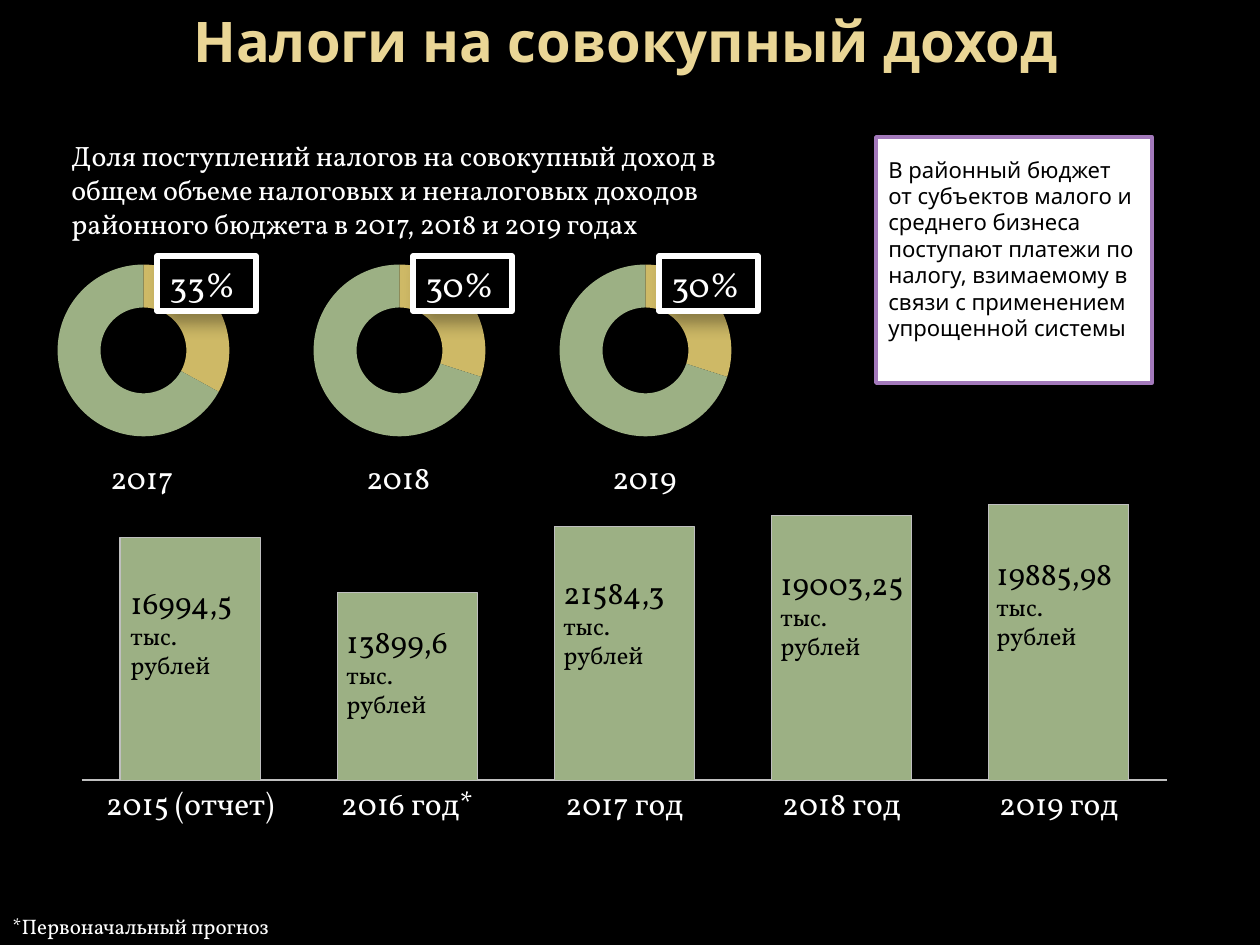
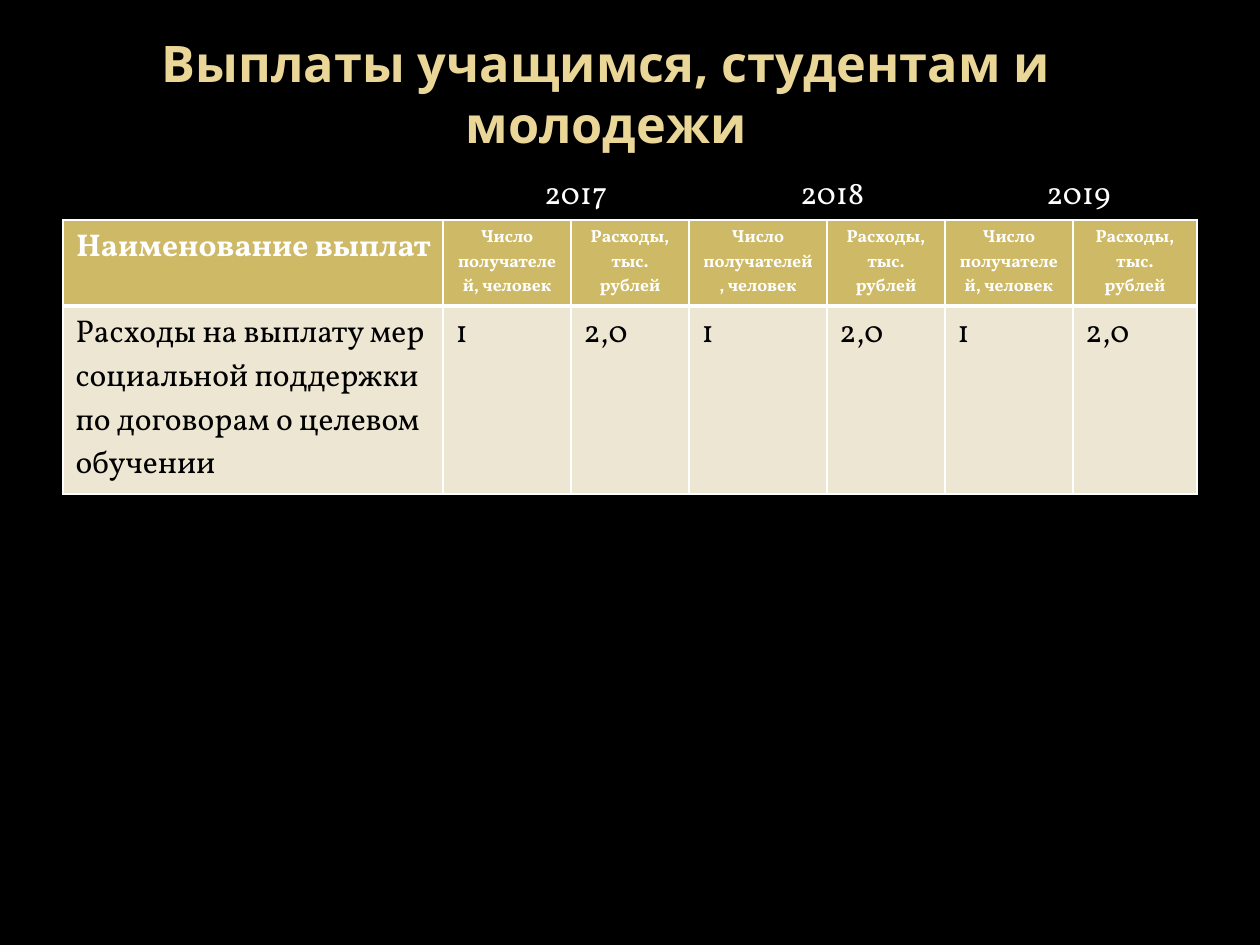
from lxml import etree
from pptx import Presentation
from pptx.chart.data import CategoryChartData
from pptx.dml.color import RGBColor
from pptx.enum.chart import XL_CHART_TYPE as ChartType, XL_TICK_MARK as Tick
from pptx.enum.shapes import MSO_SHAPE as Preset
from pptx.enum.text import MSO_ANCHOR as Anchor, MSO_AUTO_SIZE as AutoSize, PP_ALIGN as Align
from pptx.oxml import parse_xml
from pptx.oxml.ns import nsdecls, qn
from pptx.util import Emu, Pt

# ---- Shared style ----
COLORS = {
    "black": "000000", "white": "FFFFFF", "title": "EAD696", "gold": "CEB966",
    "green": "9CB084", "violet": "A379BB", "cream": "EDE6D3", "grey": "BFBFBF",
}
SERIF, SANS = "Vollkorn", "Noto Sans"
EMU_PER_PX = 914400 / 126
PX_PER_PT = 126 / 72
LEADING = 1.2  # line pitch of wrapped text, in font sizes
TOP_TRIM = 0.19  # height that the tight leading takes off the first line
YEARS = ("2017", "2018", "2019")
YEAR_OFFSETS = (0, 256, 502)

# ---- Slide 1 content ----
INCOME_TITLE = "Налоги на совокупный доход"
SHARE_INTRO = ("Доля поступлений налогов на совокупный доход в общем объеме налоговых и "
               "неналоговых доходов районного бюджета в 2017, 2018 и 2019 годах")
SHARES = (33, 30, 30)
PAYERS_NOTE = ("В районный бюджет от субъектов малого и среднего бизнеса поступают платежи "
               "по налогу, взимаемому в связи с применением упрощенной системы")
# category, bar height in percent, amount, top of the amount in px
INCOME_BARS = [
    ("2015 (отчет)", 88, "16994,5", 571),
    ("2016 год*", 68, "13899,6", 610),
    ("2017 год", 92, "21584,3", 561),
    ("2018 год", 96, "19003,25", 552),
    ("2019 год", 100, "19885,98", 542),
]
AMOUNT_UNIT = "тыс. рублей"
FOOTNOTE = "*Первоначальный прогноз"

# ---- Slide 2 content ----
PAYMENTS_TITLE = "Выплаты учащимся, студентам и молодежи"
PAYMENT_HEADER = ["Наименование выплат"] + [
    "Число получателей, человек", "Расходы,\nтыс. рублей"] * len(YEARS)
PAYMENT_ROW = ["Расходы на выплату мер социальной поддержки по договорам о целевом обучении"
               ] + ["1", "2,0"] * len(YEARS)
PAYMENT_COLUMNS = (380, 128, 118, 138, 118, 128, 124)
PAYMENT_ROW_HEIGHTS = (86, 188)


# ---- Helpers ----
def px(length):
    return Emu(round(length * EMU_PER_PX))


def place(*lengths):
    return [px(length) for length in lengths]


def rgb(name):
    return RGBColor.from_string(COLORS[name])


def style(para, size, color, font=SERIF, bold=False, align=Align.LEFT, tight=False):
    para.alignment = align
    if tight:
        para.line_spacing = Pt(size * LEADING)
    for span in para.runs:
        span.font.size, span.font.name, span.font.bold = Pt(size), font, bold
        span.font.color.rgb = rgb(color)


def add_text(slide, text, left, top, width, height, sizes, color="white", tight=False):
    """Add a text box; sizes holds one font size per paragraph."""
    box = slide.shapes.add_textbox(*place(left, top, width, height))
    frame = box.text_frame
    frame.word_wrap, frame.text = True, text
    if tight:
        frame.margin_top = px(6 + round(TOP_TRIM * sizes[0] * PX_PER_PT))
    for para, size in zip(frame.paragraphs, sizes):
        style(para, size, color, tight=tight)


def add_box(slide, text, at, fill, line, line_width, size, color, font=SERIF, tight=False):
    box = slide.shapes.add_shape(Preset.RECTANGLE, *place(*at))
    box.shadow.inherit = False
    box.fill.solid()
    box.fill.fore_color.rgb = rgb(fill)
    box.line.color.rgb, box.line.width = rgb(line), Pt(line_width)
    frame = box.text_frame
    frame.word_wrap, frame.vertical_anchor, frame.text = True, Anchor.TOP, text
    style(frame.paragraphs[0], size, color, font, tight=tight)
    return box


def add_drop_shadow(box):
    effects = box.fill._xPr.find(qn("a:effectLst"))
    effects.append(parse_xml(
        f'<a:outerShdw {nsdecls("a")} blurRad="{Pt(10.2)}" dist="{Pt(8)}" dir="2700000" '
        f'rotWithShape="0"><a:srgbClr val="{COLORS["black"]}"><a:alpha val="35000"/>'
        '</a:srgbClr></a:outerShdw>'))


def add_titled_slide(deck, title, at, size, wrapped=False):
    slide = deck.slides.add_slide(deck.slide_layouts[5])
    box = slide.shapes.title
    box.left, box.top, box.width, box.height = place(*at)
    frame = box.text_frame
    frame.text, frame.word_wrap = title, True
    frame.auto_size, frame.vertical_anchor = AutoSize.NONE, Anchor.MIDDLE
    style(frame.paragraphs[0], size, "title", SANS, True, Align.CENTER, wrapped)
    return slide


def add_years(slide, left, top):
    for year, offset in zip(YEARS, YEAR_OFFSETS):
        add_text(slide, year, left + offset, top, 90, 50, [18])


def add_plain_chart(slide, kind, at, categories, values, layout):
    data = CategoryChartData()
    data.categories = categories
    data.add_series("Series 1", values)
    chart = slide.shapes.add_chart(kind, *place(*at), data).chart
    chart.has_title = chart.has_legend = False
    chart.font.name, chart.font.size = SERIF, Pt(18)
    chart.font.color.rgb = rgb("white")
    # Fixed inner plot area, as fractions of the frame
    plot_area = chart.element.find(".//" + qn("c:plotArea"))
    for automatic in plot_area.findall(qn("c:layout")):
        plot_area.remove(automatic)
    parts = "".join(f'<c:{tag} val="{value}"/>' for tag, value in zip("xywh", layout))
    plot_area.insert(0, parse_xml(
        f'<c:layout {nsdecls("c")}><c:manualLayout><c:layoutTarget val="inner"/>'
        f'<c:xMode val="edge"/><c:yMode val="edge"/>{parts}</c:manualLayout></c:layout>'))
    return chart


def set_borders(cell, bottom_width):
    properties = cell._tc.get_or_add_tcPr()
    widths = {"lnL": 1, "lnR": 1, "lnT": 1, "lnB": bottom_width}
    for position, (tag, width) in enumerate(widths.items()):
        line = etree.Element(qn("a:" + tag), w=str(Pt(width)))
        fill = etree.SubElement(line, qn("a:solidFill"))
        etree.SubElement(fill, qn("a:srgbClr"), val=COLORS["white"])
        properties.insert(position, line)


# ---- Slide parts ----
def add_income_bars(slide):
    names, heights, amounts, tops = zip(*INCOME_BARS)
    chart = add_plain_chart(slide, ChartType.COLUMN_STACKED, (59, 483, 1131, 354),
                            names, heights, (0.02, 0.06, 0.96, 0.78))
    plot = chart.plots[0]
    plot.gap_width, plot.overlap, plot.vary_by_categories = 55, 100, False
    bars = plot.series[0].format
    bars.fill.solid()
    bars.fill.fore_color.rgb = rgb("green")
    bars.line.color.rgb, bars.line.width = rgb("grey"), Pt(0.75)
    values = chart.value_axis
    values.visible = values.has_major_gridlines = False
    values.minimum_scale, values.maximum_scale = 0, 100
    axis = chart.category_axis
    axis.major_tick_mark = axis.minor_tick_mark = Tick.NONE
    axis.format.line.color.rgb, axis.format.line.width = rgb("grey"), Pt(1)
    for index, (amount, top) in enumerate(zip(amounts, tops)):
        add_text(slide, f"{amount}\n{AMOUNT_UNIT}", 118 + round(index * 216.5), top,
                 150, 110, [18, 14], "black", tight=True)


def add_share_rings(slide):
    for share, offset in zip(SHARES, YEAR_OFFSETS):
        chart = add_plain_chart(slide, ChartType.DOUGHNUT, (39 + offset, 246, 207, 207),
                                ("1", "2"), (share, 100 - share), (0.09, 0.09, 0.83, 0.83))
        plot = chart.plots[0]
        plot.vary_by_categories = False
        for index, color in enumerate(("gold", "green")):
            fill = plot.series[0].points[index].format.fill
            fill.solid()
            fill.fore_color.rgb = rgb(color)
    for share, offset in zip(SHARES, YEAR_OFFSETS):
        label = add_box(slide, f"{share}%", (157 + offset, 256, 99, 55),
                        "black", "white", 3, 20, "white")
        add_drop_shadow(label)


def add_payments_table(slide):
    rows = (PAYMENT_HEADER, PAYMENT_ROW)
    table = slide.shapes.add_table(
        len(rows), len(PAYMENT_COLUMNS),
        *place(63, 220, sum(PAYMENT_COLUMNS), sum(PAYMENT_ROW_HEIGHTS))).table
    for column, width in zip(table.columns, PAYMENT_COLUMNS):
        column.width = px(width)
    for row_index, (texts, height) in enumerate(zip(rows, PAYMENT_ROW_HEIGHTS)):
        table.rows[row_index].height = px(height)
        header = row_index == 0
        for column_index, text in enumerate(texts):
            cell = table.cell(row_index, column_index)
            cell.text = text
            cell.fill.solid()
            cell.fill.fore_color.rgb = rgb("gold" if header else "cream")
            set_borders(cell, 3 if header else 1)
            if column_index == 0:
                cell.margin_right = px(11)
            size = 10 if header and column_index else 18
            for para in cell.text_frame.paragraphs:
                style(para, size, "white" if header else "black", bold=header,
                      align=Align.CENTER if header else Align.LEFT)


def main():
    deck = Presentation()
    deck.slide_width, deck.slide_height = place(1260, 945)
    background = deck.slide_master.background.fill
    background.solid()
    background.fore_color.rgb = rgb("black")

    # Slide 1: income taxes
    slide = add_titled_slide(deck, INCOME_TITLE, (59, 0, 1134, 81), 32)
    add_income_bars(slide)
    note = add_box(slide, PAYERS_NOTE, (876, 137, 276, 246), "white", "violet", 2,
                   12.6, "black", SANS, tight=True)
    note.text_frame.margin_top = px(19)
    add_share_rings(slide)
    add_text(slide, SHARE_INTRO, 59, 128, 699, 115, [16], tight=True)
    add_text(slide, FOOTNOTE, 0, 907, 344, 38, [12])
    add_years(slide, 98, 452)

    # Slide 2: payments to students
    slide = add_titled_slide(deck, PAYMENTS_TITLE, (39, 34, 1134, 118), 28.8, wrapped=True)
    add_payments_table(slide)
    add_years(slide, 532, 167)

    deck.save("out.pptx")


if __name__ == "__main__":
    main()
